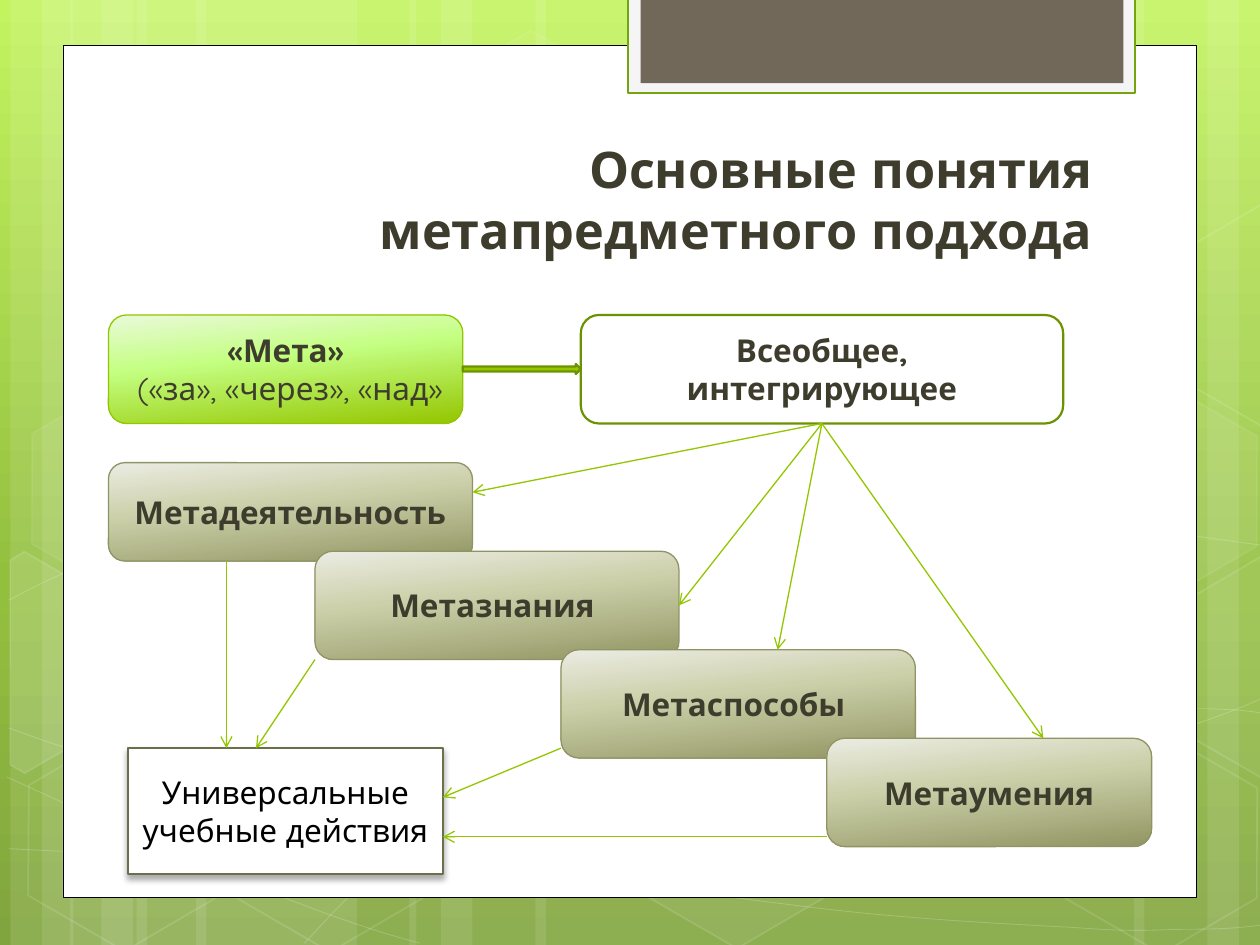
from copy import deepcopy

from lxml import etree
from pptx import Presentation
from pptx.dml.color import RGBColor
from pptx.enum.shapes import MSO_CONNECTOR, MSO_SHAPE
from pptx.enum.text import MSO_ANCHOR, MSO_AUTO_SIZE, PP_ALIGN
from pptx.oxml.ns import qn
from pptx.util import Pt

RECT, ROUNDED = MSO_SHAPE.RECTANGLE, MSO_SHAPE.ROUNDED_RECTANGLE
HEXAGON, RIGHT_ARROW = MSO_SHAPE.HEXAGON, MSO_SHAPE.RIGHT_ARROW
STRAIGHT = MSO_CONNECTOR.STRAIGHT
MIDDLE, BOTTOM = MSO_ANCHOR.MIDDLE, MSO_ANCHOR.BOTTOM
CENTER, RIGHT = PP_ALIGN.CENTER, PP_ALIGN.RIGHT
FONT, INK, LIME, WHITE = "Quicksand", "3E3D2D", "94C600", "FFFFFF"
GREEN_FADE = [(0, "EAF9DA"), (40, "C4FF82"), (100, LIME)]
OLIVE_FADE = [(0, "EBECE3"), (40, "CDD1AB"), (100, "929663")]


def paint(fill, colour, alpha=100, angle=84):
    if colour is None or alpha == 0:
        fill.background()
    elif isinstance(colour, str):
        fill.solid()
        fill.fore_color.rgb = RGBColor.from_string(colour)
        if alpha < 100:
            tone = fill._xPr.find(qn("a:solidFill"))[0]
            etree.SubElement(tone, qn("a:alpha"), val=str(alpha * 1000))
    else:
        fill.gradient()
        fill.gradient_angle = 360 - angle
        stops = fill._xPr.find(qn("a:gradFill")).find(qn("a:gsLst"))
        stops.insert(1, deepcopy(stops[0]))
        for stop, (position, tone) in zip(fill.gradient_stops, colour):
            stop.position = position / 100
            stop.color.rgb = RGBColor.from_string(tone)


def dress(shape, colour, line=None, width=0.75, alpha=100, line_alpha=100):
    shape.shadow.inherit = False
    paint(shape.fill, colour, alpha)
    paint(shape.line.fill, line, line_alpha)
    if line:
        shape.line.width = Pt(width)
    return shape


prs = Presentation()
prs.slide_width, prs.slide_height = Pt(720), Pt(540)
slide = prs.slides.add_slide(prs.slide_layouts[5])
shapes = slide.shapes
paint(slide.background.fill, [(0, "C3F35F"), (62, "93BF3F"), (100, "81A53E")], angle=90)

bands = [(78, 126), (6, 36), (24, 60), (112, 126), (40, 36), (58, 60),
         (528, 126), (690, 36), (648, 60), (306, 222), (234, 36), (252, 60)]
for left, width in bands:
    dress(shapes.add_shape(RECT, Pt(left), 0, Pt(width), Pt(540)), WHITE, alpha=10)

waves = [
    ((5, 485), [(44, 487, 83, 489, 137, 488), (191, 487, 258, 486, 330, 479),
                (402, 472, 504, 458, 570, 444), (635, 431, 703, 409, 725, 397)]),
    ((5, 343), [(26, 332, 47, 321, 87, 310), (128, 300, 186, 284, 250, 279),
                (314, 274, 392, 273, 471, 279), (550, 285, 682, 307, 725, 312)]),
    ((4, 444), [(91, 484, 178, 523, 240, 539)]),
    ((5, 416), [(27, 424, 50, 432, 92, 444), (134, 454, 197, 472, 257, 485),
                (317, 497, 392, 510, 452, 517), (512, 525, 576, 528, 614, 530),
                (652, 533, 662, 531, 680, 531), (699, 531, 712, 530, 725, 528)]),
    ((174, 539), [(187, 525, 200, 510, 217, 498), (235, 485, 259, 470, 279, 460),
                  (300, 450, 312, 446, 338, 438), (364, 431, 413, 421, 438, 416),
                  (464, 411, 467, 410, 490, 410), (512, 408, 547, 405, 572, 405),
                  (597, 404, 638, 405, 638, 405), (686, 405),
                  (699, 405, 711, 406, 718, 407), (724, 408, 722, 407, 724, 408)]),
]
for start, pieces in waves:
    builder = shapes.build_freeform(*map(Pt, start))
    for piece in pieces:
        builder.add_line_segments([(Pt(x), Pt(y)) for x, y in zip(piece[::2], piece[1::2])],
                                  close=False)
    wave = dress(builder.convert_to_shape(), None, WHITE, 0.5, line_alpha=20)
    segments = iter(list(wave._element.iter(qn("a:lnTo"))))
    for piece in pieces:
        first = next(segments)
        if len(piece) == 6:
            first.tag = qn("a:cubicBezTo")
            for control in (next(segments), next(segments)):
                first.append(control[0])
                control.getparent().remove(control)

hexagons = [(240.5, 26, 4, 8), (358, 424, 6, 12), (8, 425.5, 0, 12), (10, 224.5, 7, 8),
            (125.5, 426, 0, 12), (542, 326, 10, 12), (600.5, 427, 0, 12), (600.5, 226, 7, 8)]
for left, top, alpha, line_alpha in hexagons:
    cell = shapes.add_shape(HEXAGON, Pt(left), Pt(top), Pt(126), Pt(109.5))
    cell.rotation = 30
    cell.adjustments[0] = 0.285
    dress(cell, WHITE, WHITE, 1, alpha, line_alpha)

left_cut = [(-24, 339), (-19.5, 330.5), (44, 330.5), (75.5, 385.5), (44, 440), (34.5, 440)]
right_cut = [(660, 374), (691, 319.5), (697.5, 319.5), (757.5, 424), (754.5, 429), (691.5, 429)]
for corners, rise, alpha in [(left_cut, 0, 10), (right_cut, 0, 4), (right_cut, 201, 0)]:
    corners = [(Pt(x), Pt(y - rise)) for x, y in corners]
    builder = shapes.build_freeform(*corners[0])
    builder.add_line_segments(corners[1:], close=True)
    cell = dress(builder.convert_to_shape(), WHITE, WHITE, 1, alpha, 12)
    cell.rotation = 30

for at, colour, line, width in [((36, 26, 648, 487), WHITE, "000000", 0.5),
                                ((359, -1.5, 289.5, 54.7), "F5F5F5", "74A510", 1.25),
                                ((366, -1.5, 276, 49), "71685A", None, 0)]:
    dress(shapes.add_shape(RECT, *map(Pt, at)), colour, line, width)

title = shapes.title
shapes._spTree.append(title._element)
title.left, title.top, title.width, title.height = Pt(78.5), Pt(73.4), Pt(553.2), Pt(78.5)
title.text_frame.text = "Основные понятия метапредметного подхода"

concepts = {
    "meta": (ROUNDED, (62, 180, 202.5, 62), GREEN_FADE, LIME, 0.75,
             "«Мета»\n («за», «через», «над»"),
    "universal": (ROUNDED, (331.9, 180, 275.6, 62), None, "6D9200", 1.25,
                  "Всеобщее, интегрирующее"),
    "activity": (ROUNDED, (62, 264.4, 208, 56.2), OLIVE_FADE, "909465", 0.75, "Метадеятельность"),
    "knowledge": (ROUNDED, (180, 315, 208, 61.9), OLIVE_FADE, "909465", 0.75, "Метазнания "),
    "methods": (ROUNDED, (320.6, 371.3, 202.5, 61.9), OLIVE_FADE, "909465", 0.75,
                "Метаспособы "),
    "skills": (ROUNDED, (472.5, 421.9, 185.6, 61.9), OLIVE_FADE, "909465", 0.75, "Метаумения"),
    "actions": (RECT, (73.1, 427.5, 180, 72), WHITE, "6C6F4C", 1.25,
                "Универсальные учебные действия"),
}
boxes = {}
for key, (kind, at, colour, line, width, wording) in concepts.items():
    boxes[key] = dress(shapes.add_shape(kind, *map(Pt, at)), colour, line, width)
    boxes[key].text_frame.text = wording

shade = etree.SubElement(boxes["actions"]._element.spPr.find(qn("a:effectLst")), qn("a:outerShdw"),
                         blurRad=str(Pt(3.5)), dist=str(Pt(2.2)), dir="5400000", rotWithShape="0")
shade_tone = etree.SubElement(shade, qn("a:srgbClr"), val="000000")
etree.SubElement(shade_tone, qn("a:alpha"), val="32000")

for key, holder in {"title": title, **boxes}.items():
    heading, plain = key == "title", key == "actions"
    frame_format = {"word_wrap": True, "auto_size": MSO_AUTO_SIZE.NONE,
                    "vertical_anchor": BOTTOM if heading else MIDDLE}
    font_format = {"name": FONT, "size": Pt(28.8 if heading else 18), "bold": not plain}
    for attribute, value in frame_format.items():
        setattr(holder.text_frame, attribute, value)
    for paragraph in holder.text_frame.paragraphs:
        paragraph.alignment = RIGHT if heading else CENTER
        font = paragraph.runs[0].font
        for attribute, value in font_format.items():
            setattr(font, attribute, value)
        font.color.rgb = RGBColor.from_string("000000" if plain else INK)
boxes["meta"].text_frame.paragraphs[1].runs[0].font.bold = False

dress(shapes.add_shape(RIGHT_ARROW, Pt(264.4), Pt(208), Pt(67.5), Pt(5.7)), LIME, "6D9200", 1.25)

hub = (469.7, 242)
links = [(hub, (270, 281.3), "universal", None), (hub, (388, 346), "universal", "knowledge"),
         (hub, (444.4, 371.3), "universal", None), (hub, (596.2, 421.9), "universal", None),
         ((129.4, 320.6), (129.4, 427.5), None, None), ((180, 376.9), (146.3, 427.5), None, None),
         ((320.6, 427.5), (253.1, 455.6), None, None), ((472.5, 478.2), (253.1, 478.2), None, None)]
for start, end, source, target in links:
    link = shapes.add_connector(STRAIGHT, *map(Pt, start + end))
    if source:
        link.begin_connect(boxes[source], 2)
    if target:
        link.end_connect(boxes[target], 3)
    paint(link.line.fill, LIME)
    link.line.width = Pt(0.75)
    etree.SubElement(link.line._get_or_add_ln(), qn("a:tailEnd"), type="arrow")
    etree.SubElement(link._element.spPr, qn("a:effectLst"))

prs.save("out.pptx")
